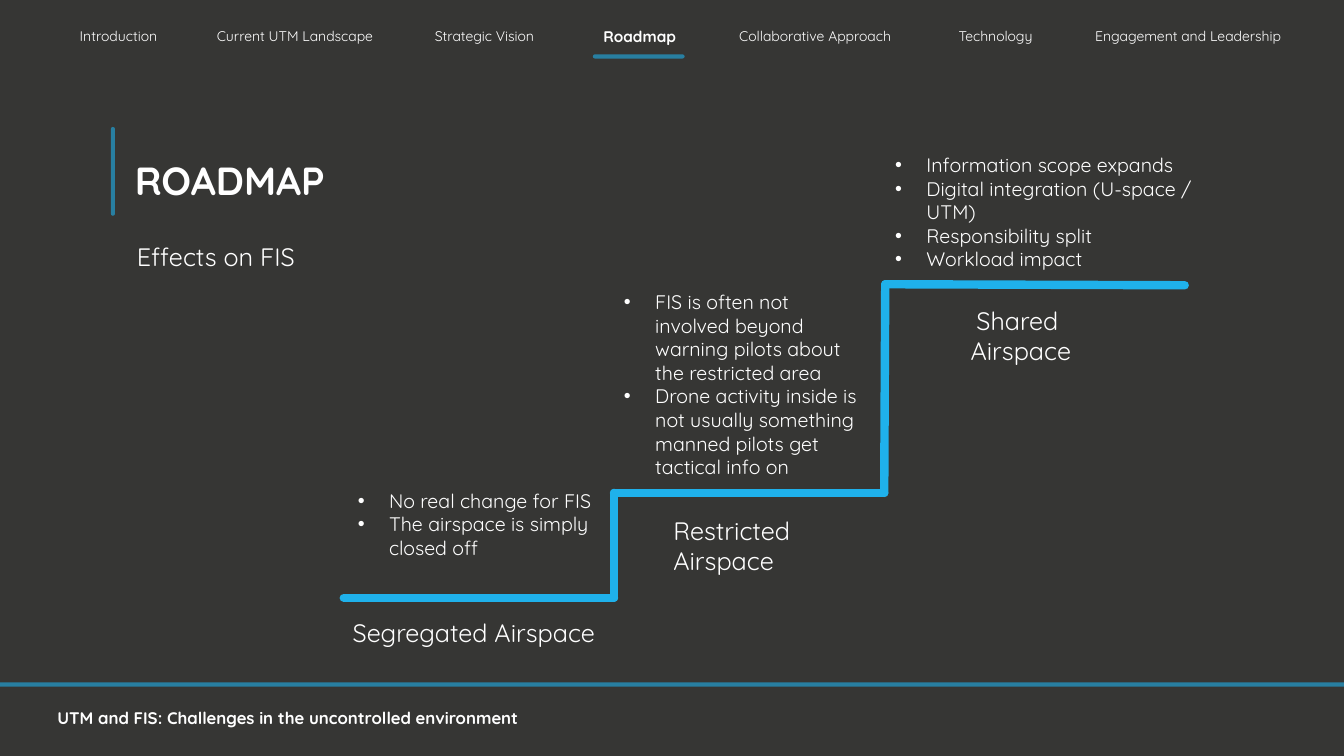
from dataclasses import dataclass
from itertools import pairwise

from lxml import etree
from pptx import Presentation
from pptx import util as u
from pptx.dml.color import RGBColor
from pptx.enum import shapes, text
from pptx.oxml.ns import qn

NO_TABLE_STYLE = "{2D5ABB26-0587-4C30-8999-92F81FD0307C}"


@dataclass(frozen=True)
class Theme:
    font: str = "Quicksand"
    ground: str = "363634"
    ink: str = "FFFFFF"
    accent: str = "1FB1EB"
    title: int = 28
    label: int = 18
    body: int = 14
    footer: int = 12
    nav_active: int = 11
    nav: int = 10
    step_line: int = 6
    rule_line: int = 3
    rule_alpha: int = 60


class SlideBuilder:
    def __init__(self, slide, theme):
        self.s = slide
        self.theme = theme
        fill = slide.background.fill
        fill.solid()
        fill.fore_color.rgb = RGBColor.from_string(theme.ground)

    def run(self, p, words, size, bold=False):
        r = p.add_run()
        r.text = words
        r.font.name = self.theme.font
        r.font.size = u.Pt(size)
        r.font.bold = bold
        r.font.color.rgb = RGBColor.from_string(self.theme.ink)

    def text_box(self, box, lines, size, bold=False, bullets=False,
                 align=text.PP_ALIGN.LEFT, anchor=text.MSO_ANCHOR.TOP):
        sp = self.s.shapes.add_textbox(*map(u.Inches, box))
        tf = sp.text_frame
        tf.word_wrap = True
        tf.vertical_anchor = anchor
        for i, line in enumerate(lines):
            p = tf.add_paragraph() if i else tf.paragraphs[0]
            p.alignment = align
            if bullets:
                self.bullet(p)
            self.run(p, line, size, bold)

    def bullet(self, p):
        pPr = p._p.get_or_add_pPr()
        indent = u.Inches(0.31)
        pPr.set("marL", str(indent))
        pPr.set("indent", str(-indent))
        etree.SubElement(pPr, qn("a:buFont")).set("typeface", "Arial")
        etree.SubElement(pPr, qn("a:buChar")).set("char", "•")

    def line(self, start, end, width, alpha=100):
        """Round-capped accent line; alpha is the opacity in percent."""
        cx = self.s.shapes.add_connector(
            shapes.MSO_CONNECTOR.STRAIGHT, *map(u.Inches, (*start, *end)))
        cx.line.width = u.Pt(width)
        cx.line.color.rgb = RGBColor.from_string(self.theme.accent)
        ln = cx.line._ln
        ln.set("cap", "rnd")
        if alpha < 100:
            color = ln.find(".//" + qn("a:srgbClr"))
            etree.SubElement(color, qn("a:alpha")).set("val", str(alpha * 1000))
        etree.SubElement(cx._element.spPr, qn("a:effectLst"))

    def rule(self, start, end):
        self.line(start, end, self.theme.rule_line, self.theme.rule_alpha)

    def nav_table(self, box, sections, active):
        """One-row table of (section, column width) with the active one bold."""
        frame = self.s.shapes.add_table(1, len(sections), *map(u.Inches, box))
        table = frame.table
        table.first_row = table.horz_banding = False
        table._tbl.tblPr.find(qn("a:tableStyleId")).text = NO_TABLE_STYLE
        for i, (name, width) in enumerate(sections):
            table.columns[i].width = u.Inches(width)
            cell = table.cell(0, i)
            cell.fill.background()
            p = cell.text_frame.paragraphs[0]
            p.alignment = text.PP_ALIGN.CENTER
            on = name == active
            self.run(p, name, self.theme.nav_active if on else self.theme.nav, on)


SECTIONS = [
    ("Introduction", 1.41), ("Current UTM Landscape", 2.09),
    ("Strategic Vision", 1.67), ("Roadmap", 1.41),
    ("Collaborative Approach", 2.07), ("Technology", 1.51),
    ("Engagement and Leadership", 2.31),
]
STAIRCASE = [(3.41, 5.93), (6.09, 5.93), (6.09, 4.89),
             (8.77, 4.89), (8.78, 2.82), (11.75, 2.83)]
EFFECTS = [
    ((3.45, 4.8, 2.52, 1.04),
     ["No real change for FIS", "The airspace is simply closed off"]),
    ((6.09, 2.83, 2.62, 1.99),
     ["FIS is often not involved beyond warning pilots about the restricted area",
      "Drone activity inside is not usually something manned pilots get tactical info on"]),
    ((8.78, 1.47, 3.31, 1.28),
     ["Information scope expands", "Digital integration (U-space / UTM)",
      "Responsibility split", "Workload impact"]),
]
STEP_LABELS = [
    ((3.36, 6.07, 2.68, 0.71), ["Segregated Airspace"], text.PP_ALIGN.CENTER),
    ((6.58, 5.06, 2.16, 0.71), ["Restricted Airspace"], text.PP_ALIGN.LEFT),
    ((8.76, 2.98, 2.73, 0.71), ["Shared ", "Airspace"], text.PP_ALIGN.CENTER),
]


def main():
    prs = Presentation()
    prs.slide_width, prs.slide_height = u.Inches(13.33), u.Inches(7.5)
    theme = Theme()
    b = SlideBuilder(prs.slides.add_slide(prs.slide_layouts[6]), theme)

    b.rule((1.12, 1.28), (1.12, 2.12))
    b.text_box((1.24, 0.96, 5.55, 1.65), ["ROADMAP"], theme.title, bold=True,
               anchor=text.MSO_ANCHOR.MIDDLE)
    b.text_box((1.26, 2.34, 3.24, 0.4), ["Effects on FIS"], theme.label)

    for start, end in pairwise(STAIRCASE):
        b.line(start, end, theme.step_line)
    for box, lines in EFFECTS:
        b.text_box(box, lines, theme.body, bullets=True)
    for box, lines, align in STEP_LABELS:
        b.text_box(box, lines, theme.label, align=align)

    b.text_box((0.47, 6.97, 6.68, 0.3),
               ["UTM and FIS: Challenges in the uncontrolled environment"],
               theme.footer, bold=True)
    b.rule((0, 6.79), (13.33, 6.79))
    b.nav_table((0.47, 0.22, 12.47, 0.41), SECTIONS, "Roadmap")
    b.rule((5.9, 0.56), (6.77, 0.56))

    prs.save("out.pptx")


if __name__ == "__main__":
    main()
